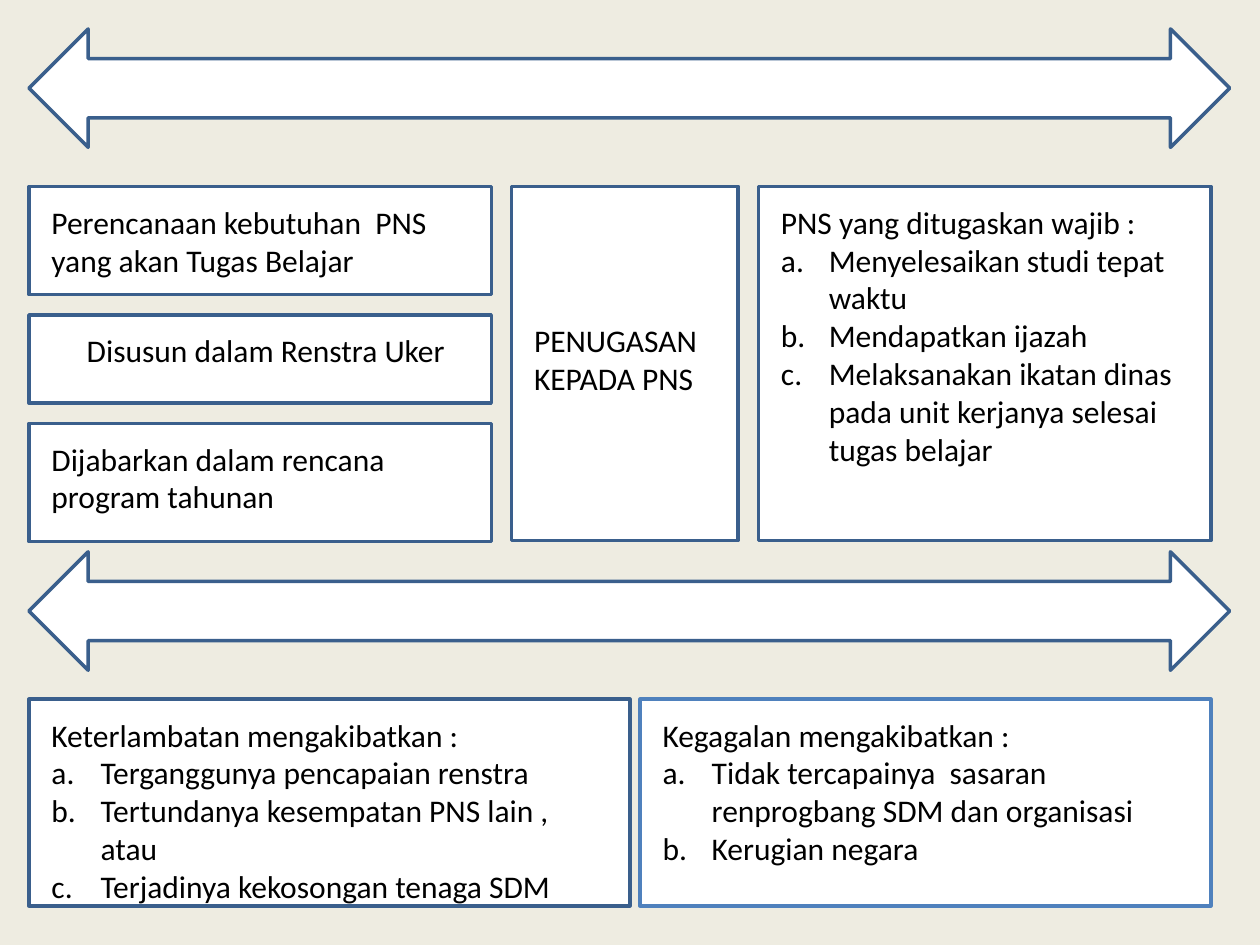
from dataclasses import dataclass

from lxml.etree import SubElement
from pptx import Presentation
from pptx.dml.color import RGBColor
from pptx.enum.shapes import MSO_SHAPE
from pptx.enum.text import MSO_AUTO_SIZE, PP_ALIGN
from pptx.oxml.ns import qn
from pptx.slide import Slide
from pptx.util import Inches, Pt

BACKGROUND = RGBColor(0xEE, 0xEC, 0xE1)
WHITE = RGBColor(0xFF, 0xFF, 0xFF)
BLACK = RGBColor(0x00, 0x00, 0x00)
NAVY = RGBColor(0x3A, 0x5F, 0x8C)
BLUE = RGBColor(0x4F, 0x81, 0xBD)

TEXT_FORMAT = {"size": Pt(18), "name": "Calibri"}
LEFT = 0.23
INSET = 0.08
PLAN_WIDTH = 3.67
STAGE_TOP, STAGE_HEIGHT = 1.48, 2.81
RESULT_TOP, RESULT_HEIGHT = 5.55, 1.64
ARROW_TOPS = (0.23, 4.38)


@dataclass(frozen=True)
class Panel:
    left: float
    top: float
    width: float
    height: float
    heading: str
    text_height: float
    items: tuple[str, ...] = ()
    indent: float = 0.39
    line: RGBColor = NAVY
    align: PP_ALIGN = PP_ALIGN.LEFT
    text_left: float = INSET
    text_top: float = INSET
    text_trim: float = 0.15


PANELS = (
    Panel(4.06, STAGE_TOP, 1.8, STAGE_HEIGHT, "PENUGASAN KEPADA PNS", 0.71,
          text_top=1.02, text_trim=0.24),
    Panel(LEFT, STAGE_TOP, PLAN_WIDTH, 0.86,
          "Perencanaan kebutuhan  PNS yang akan Tugas Belajar", 0.71),
    Panel(LEFT, 2.5, PLAN_WIDTH, 0.7, "Disusun dalam Renstra Uker", 0.4,
          align=PP_ALIGN.CENTER, text_left=0.16, text_trim=0.23),
    Panel(LEFT, 3.36, PLAN_WIDTH, 0.94,
          "Dijabarkan dalam rencana program tahunan", 0.71),
    Panel(6.02, STAGE_TOP, 3.59, STAGE_HEIGHT, "PNS yang ditugaskan wajib :", 2.22,
          ("Menyelesaikan studi tepat waktu",
           "Mendapatkan ijazah",
           "Melaksanakan ikatan dinas pada unit kerjanya selesai tugas belajar"),
          indent=0.38),
    Panel(LEFT, RESULT_TOP, 4.77, RESULT_HEIGHT, "Keterlambatan mengakibatkan :", 1.62,
          ("Terganggunya pencapaian renstra",
           "Tertundanya kesempatan PNS lain , atau",
           "Terjadinya kekosongan tenaga SDM")),
    Panel(5.08, RESULT_TOP, 4.53, RESULT_HEIGHT, "Kegagalan mengakibatkan :", 1.62,
          ("Tidak tercapainya  sasaran renprogbang SDM dan organisasi",
           "Kerugian negara"), line=BLUE),
)


def draw_outline(slide: Slide, kind: MSO_SHAPE, left: float, top: float,
                 width: float, height: float, line: RGBColor = NAVY) -> None:
    outline = slide.shapes.add_shape(
        kind, Inches(left), Inches(top), Inches(width), Inches(height))
    outline.shadow.inherit = False
    outline.fill.solid()
    outline.fill.fore_color.rgb = WHITE
    outline.line.color.rgb = line
    outline.line.width = Pt(2)


def draw_panel(slide: Slide, panel: Panel) -> None:
    draw_outline(slide, MSO_SHAPE.RECTANGLE, panel.left, panel.top,
                 panel.width, panel.height, panel.line)
    wording = slide.shapes.add_textbox(
        Inches(panel.left + panel.text_left), Inches(panel.top + panel.text_top),
        Inches(panel.width - panel.text_trim), Inches(panel.text_height)).text_frame
    wording.word_wrap = True
    wording.auto_size = MSO_AUTO_SIZE.SHAPE_TO_FIT_TEXT
    for index, sentence in enumerate((panel.heading, *panel.items)):
        paragraph = wording.add_paragraph() if index else wording.paragraphs[0]
        paragraph.alignment = panel.align
        run = paragraph.add_run()
        run.text = sentence
        for attribute, value in TEXT_FORMAT.items():
            setattr(run.font, attribute, value)
        run.font.color.rgb = BLACK
        if index:
            properties = paragraph._p.get_or_add_pPr()
            properties.set("marL", str(Inches(panel.indent)))
            properties.set("indent", str(-Inches(panel.indent)))
            SubElement(properties, qn("a:buAutoNum"), type="alphaLcPeriod")


def main() -> None:
    """Build the slide on study assignments for civil servants."""
    presentation = Presentation()
    presentation.slide_width = Inches(10)
    presentation.slide_height = Inches(7.5)
    slide = presentation.slides.add_slide(presentation.slide_layouts[6])
    slide.background.fill.solid()
    slide.background.fill.fore_color.rgb = BACKGROUND
    for top in ARROW_TOPS:
        draw_outline(slide, MSO_SHAPE.LEFT_RIGHT_ARROW, LEFT, top, 9.53, 0.94)
    for panel in PANELS:
        draw_panel(slide, panel)
    presentation.save("out.pptx")


if __name__ == "__main__":
    main()
